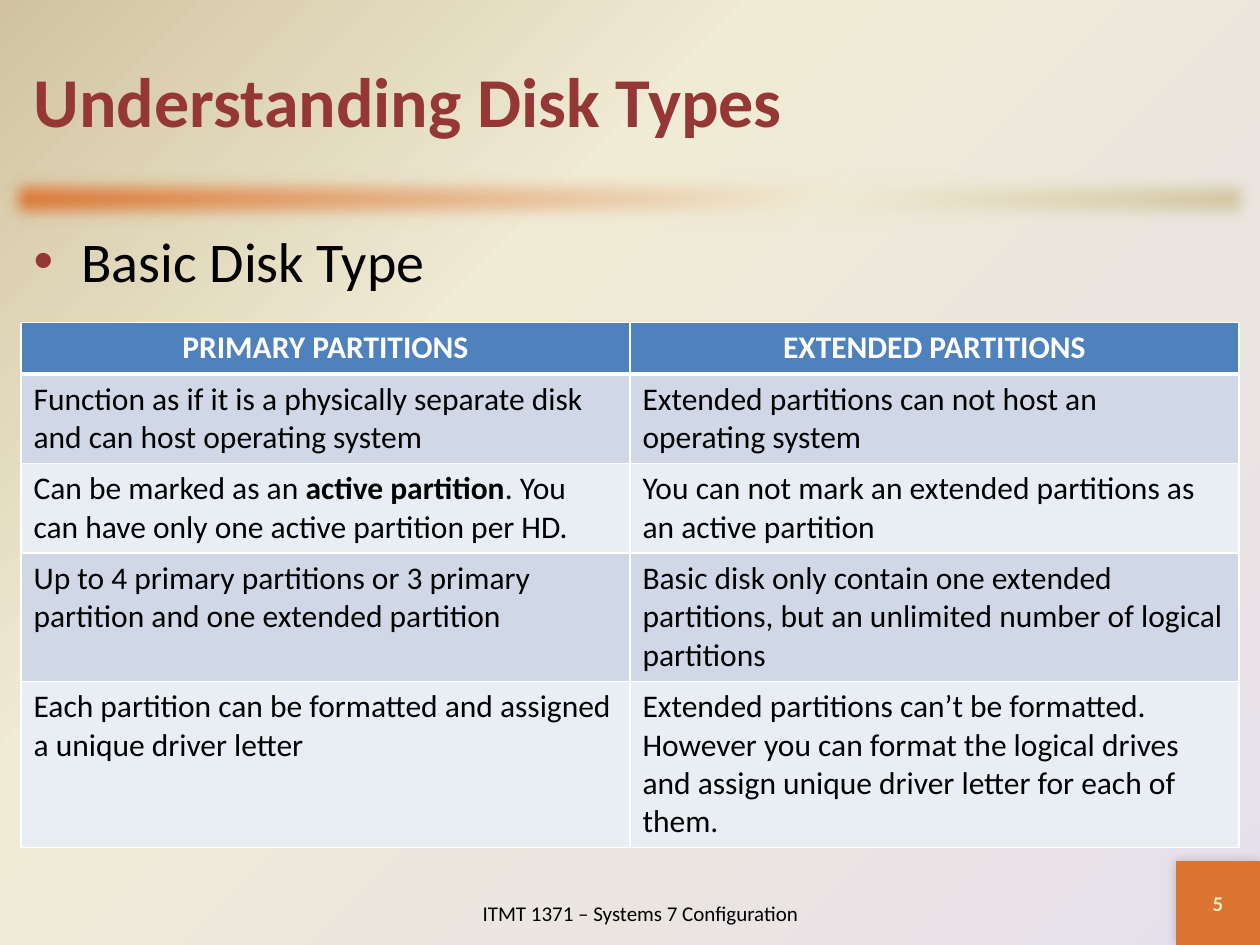
from dataclasses import dataclass
from typing import NamedTuple

from lxml import etree
from pptx import Presentation
from pptx.dml.color import RGBColor
from pptx.enum.shapes import MSO_SHAPE
from pptx.enum.text import MSO_ANCHOR, PP_ALIGN
from pptx.oxml.ns import qn
from pptx.util import Inches, Pt

RECTANGLE = MSO_SHAPE.RECTANGLE
MIDDLE, TOP = MSO_ANCHOR.MIDDLE, MSO_ANCHOR.TOP
LEFT, CENTER = PP_ALIGN.LEFT, PP_ALIGN.CENTER
UNIT = Inches(1) // 6


@dataclass(frozen=True)
class Theme:
    """Colours, font and type sizes of the slide."""
    font: str = "Calibri"
    maroon: str = "953735"
    orange: str = "DB7531"
    cream: str = "F0EBD5"
    sand: str = "D1C39F"
    lilac: str = "E6E0EC"
    number: str = "EEEBCA"
    header: str = "4F81BD"
    bands: tuple = ("D0D8E8", "E9EDF4")
    black: str = "000000"
    white: str = "FFFFFF"
    title_size: int = 40
    body_size: int = 32
    table_size: int = 18
    small_size: int = 12


class Area(NamedTuple):
    """Place on a grid of 60 columns by 45 rows."""
    column: float
    row: float
    columns: float
    rows: float

    def lengths(self) -> list:
        """Give left, top, width and height as lengths."""
        return [round(value * UNIT) for value in self]


class Style(NamedTuple):
    """Look of a run."""
    size: int
    color: str
    bold: bool = False


class TableRow(NamedTuple):
    """Height in inches and the runs of each cell; odd runs are bold."""
    height: float
    cells: tuple


THEME = Theme()
BAR = Area(0, 8, 60, 3)
CORNER = Area(56, 41, 4, 4)
TITLE = Area(1, 1, 58, 7.5)
BODY = Area(1, 10.5, 58, 30.5)
FOOTER = Area(18, 42, 25, 3)
TABLE = Area(1, 15.35, 58, 25)
ROWS = (
    TableRow(0.41, (("PRIMARY PARTITIONS",), ("EXTENDED PARTITIONS",))),
    TableRow(0.71, (
        ("Function as if it is a physically separate disk and can host operating system",),
        ("Extended partitions can not host an operating system",))),
    TableRow(0.71, (
        ("Can be marked as an ", "active partition",
         ". You can have only one active partition per HD."),
        ("You can not mark an extended partitions as an active partition",))),
    TableRow(1.02, (
        ("Up to 4 primary partitions or 3 primary partition and one extended partition",),
        ("Basic disk only contain one extended partitions, but an unlimited number of "
         "logical partitions",))),
    TableRow(1.32, (
        ("Each partition can be formatted and assigned a unique driver letter",),
        ("Extended partitions can’t be formatted. However you can format the logical "
         "drives and assign unique driver letter for each of them.",))),
)


def add_node(parent, tag: str, **attributes):
    """Append a drawing element with its attributes."""
    return etree.SubElement(parent, qn(tag), {key: str(value) for key, value in attributes.items()})


def add_color(parent, color: str):
    """Append an RGB colour element."""
    return add_node(parent, "a:srgbClr", val=color)


def set_gradient(element, first: str):
    """Swap the solid fill for a three-stop gradient and return it."""
    solid = next(element.iter(qn("a:solidFill")))
    gradient = etree.Element(qn("a:gradFill"), rotWithShape="1")
    stops = add_node(gradient, "a:gsLst")
    for position, color in ((0, first), (65, THEME.cream), (100, THEME.sand)):
        add_color(add_node(stops, "a:gs", pos=position * 1000), color)
    solid.getparent().replace(solid, gradient)
    return gradient


def add_run(paragraph, text: str, style: Style) -> None:
    """Add one styled run."""
    run = paragraph.add_run()
    run.text = text
    run.font.name = THEME.font
    run.font.size = Pt(style.size)
    run.font.bold = style.bold
    run.font.color.rgb = RGBColor.from_string(style.color)


def write(shape, text: str, style: Style, alignment=LEFT, anchor=MIDDLE):
    """Fill a shape with one line and return its paragraph."""
    frame = shape.text_frame
    frame.word_wrap = True
    frame.vertical_anchor = anchor
    paragraph = frame.paragraphs[0]
    paragraph.alignment = alignment
    add_run(paragraph, text, style)
    return paragraph


def place(shape, area: Area):
    """Move a placeholder to an area."""
    shape.left, shape.top, shape.width, shape.height = area.lengths()
    return shape


def add_block(slide, area: Area):
    """Draw an orange rectangle and return it with its effect list."""
    shape = slide.shapes.add_shape(RECTANGLE, *area.lengths())
    shape.fill.solid()
    shape.fill.fore_color.rgb = RGBColor.from_string(THEME.orange)
    shape.line.fill.background()
    shape.shadow.inherit = False
    return shape, shape._element.spPr.find(qn("a:effectLst"))


def add_decoration(slide) -> None:
    """Draw the background, the soft bar and the corner square."""
    slide.background.fill.solid()
    gradient = set_gradient(slide._element, THEME.lilac)
    circle = add_node(gradient, "a:path", path="circle")
    add_node(circle, "a:fillToRect", l=100000, t=100000)
    bar, effects = add_block(slide, BAR)
    add_node(set_gradient(bar._element.spPr, THEME.orange), "a:lin", ang=45 * 60000, scaled=1)
    add_node(effects, "a:softEdge", rad=Pt(10))
    _, effects = add_block(slide, CORNER)
    shadow = add_node(effects, "a:outerShdw", blurRad=Pt(6), dist=0, dir=225 * 60000)
    add_node(add_color(shadow, THEME.black), "a:alpha", val=20000)


def add_borders(cell, top: int, bottom: int) -> None:
    """Draw white lines round a cell."""
    properties = cell._tc.get_or_add_tcPr()
    for side, width in (("L", 1), ("R", 1), ("T", top), ("B", bottom)):
        line = add_node(properties, f"a:ln{side}", w=Pt(width))
        add_color(add_node(line, "a:solidFill"), THEME.white)


def add_partition_table(slide) -> None:
    """Draw the table that compares the partitions."""
    table = slide.shapes.add_table(len(ROWS), 2, *TABLE.lengths()).table
    for index, row in enumerate(ROWS):
        table.rows[index].height = Inches(row.height)
        is_header = index == 0
        fill = THEME.header if is_header else THEME.bands[(index - 1) % 2]
        color = THEME.white if is_header else THEME.black
        for column, texts in enumerate(row.cells):
            cell = table.cell(index, column)
            add_borders(cell, 3 if index == 1 else 1, 3 if is_header else 1)
            cell.fill.solid()
            cell.fill.fore_color.rgb = RGBColor.from_string(fill)
            paragraph = cell.text_frame.paragraphs[0]
            paragraph.alignment = CENTER if is_header else LEFT
            for order, text in enumerate(texts):
                bold = is_header or order % 2 == 1
                add_run(paragraph, text, Style(THEME.table_size, color, bold))


def add_bullet(paragraph) -> None:
    """Give a paragraph a hanging maroon bullet."""
    properties = paragraph._p.get_or_add_pPr()
    properties.set("marL", str(Inches(0.38)))
    properties.set("indent", str(-Inches(0.38)))
    add_color(add_node(properties, "a:buClr"), THEME.maroon)
    add_node(properties, "a:buFont", typeface="Arial")
    add_node(properties, "a:buChar", char="•")


def main() -> None:
    """Build and save the slide."""
    presentation = Presentation()
    presentation.slide_width, presentation.slide_height = 60 * UNIT, 45 * UNIT
    slide = presentation.slides.add_slide(presentation.slide_layouts[1])
    title, body = slide.placeholders
    add_decoration(slide)
    write(place(title, TITLE), "Understanding Disk Types",
          Style(THEME.title_size, THEME.maroon, True))
    add_bullet(write(place(body, BODY), "Basic Disk Type",
                     Style(THEME.body_size, THEME.black), anchor=TOP))
    for area, text, style in (
        (FOOTER, "ITMT 1371 – Systems 7 Configuration", Style(THEME.small_size, THEME.black)),
        (CORNER, "5", Style(THEME.small_size, THEME.number, True)),
    ):
        write(slide.shapes.add_textbox(*area.lengths()), text, style, CENTER)
    add_partition_table(slide)
    presentation.save("out.pptx")


if __name__ == "__main__":
    main()
